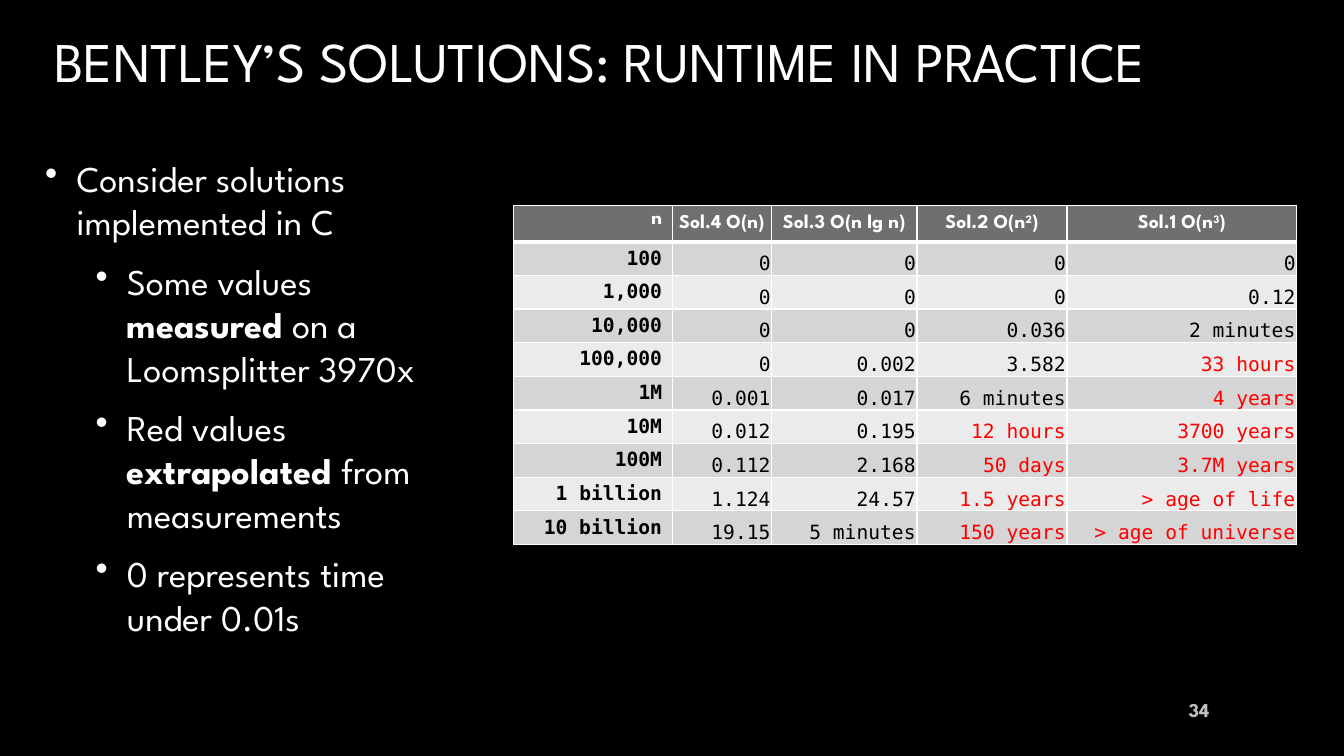
import lxml.etree
import pptx
import pptx.dml.color
import pptx.enum.text
import pptx.oxml.ns
import pptx.util

Cm = pptx.util.Cm
Pt = pptx.util.Pt
ALIGN = pptx.enum.text.PP_ALIGN
ANCHOR = pptx.enum.text.MSO_ANCHOR
SANS = "League Spartan"
MONO = "DejaVu Sans Mono"
WHITE, BLACK, RED, GREY = "FFFFFF", "000000", "FF0000", "BFBFBF"
HEADER_FILL, BAND_FILLS = "6F6F6F", ("D5D5D5", "EBEBEB")

TITLE = "BENTLEY’S SOLUTIONS: RUNTIME IN PRACTICE"
POINTS = [
    (0, "Consider solutions implemented in C"),
    (1, "Some values |measured |on a Loomsplitter 3970x"),
    (1, "Red values |extrapolated |from measurements"),
    (1, "0 represents time under 0.01s"),
]
COLUMN_WIDTHS = [3.99, 2.51, 3.66, 3.78, 5.79]
HEADINGS = ["n", "Sol.4 O(n)", "Sol.3 O(n lg n)", "Sol.2 O(n|2|)", "Sol.1 O(n|3|)"]
RUNTIMES = [
    ("100", "0", "0", "0", "0"),
    ("1,000", "0", "0", "0", "0.12"),
    ("10,000", "0", "0", "0.036", "2 minutes"),
    ("100,000", "0", "0.002", "3.582", "33 hours"),
    ("1M", "0.001", "0.017", "6 minutes", "4 years"),
    ("10M", "0.012", "0.195", "12 hours", "3700 years"),
    ("100M", "0.112", "2.168", "50 days", "3.7M years"),
    ("1 billion", "1.124", "24.57", "1.5 years", "> age of life"),
    ("10 billion", "19.15", "5 minutes", "150 years", "> age of universe"),
]
EXTRAPOLATED_UNITS = ("hours", "days", "years", "age")


def rgb(value):
    """Turn a hex string into a colour."""
    return pptx.dml.color.RGBColor.from_string(value)


def style(para, size, color, name=SANS, bold=False, align=ALIGN.LEFT):
    """Set the font and alignment of a paragraph."""
    para.alignment = align
    para.font.size = Pt(size)
    para.font.name = name
    para.font.bold = bold
    para.font.color.rgb = rgb(color)


def write(para, text, accent=None):
    """Add runs split at bars, giving every second one the accent."""
    for index, part in enumerate(text.split("|")):
        span = para.add_run()
        span.text = part
        if index % 2:
            accent(span)


def embolden(span):
    """Make a run bold."""
    span.font.bold = True


def raise_up(span):
    """Make a run superscript."""
    span._r.get_or_add_rPr().set("baseline", "30000")


def add_bullet(para, level):
    """Give a paragraph a white bullet with a hanging indent."""
    properties = para._p.get_or_add_pPr()
    properties.set("marL", str(Cm(0.79 + 1.27 * level)))
    properties.set("indent", str(Cm(-0.79)))
    color = lxml.etree.SubElement(properties, pptx.oxml.ns.qn("a:buClr"))
    lxml.etree.SubElement(color, pptx.oxml.ns.qn("a:srgbClr"), val=WHITE)
    lxml.etree.SubElement(properties, pptx.oxml.ns.qn("a:buChar"), char="•")


def add_borders(cell, top, bottom):
    """Draw white cell borders, with top and bottom widths in points."""
    properties = cell._tc.get_or_add_tcPr()
    for tag, width in (("lnL", 1), ("lnR", 1), ("lnT", top), ("lnB", bottom)):
        line = lxml.etree.SubElement(properties, pptx.oxml.ns.qn("a:" + tag), w=str(Pt(width)))
        fill = lxml.etree.SubElement(line, pptx.oxml.ns.qn("a:solidFill"))
        lxml.etree.SubElement(fill, pptx.oxml.ns.qn("a:srgbClr"), val=WHITE)


def add_frame(page, box, anchor):
    """Add a wrapping text box and return its text frame."""
    frame = page.shapes.add_textbox(*map(Cm, box)).text_frame
    frame.word_wrap = True
    frame.vertical_anchor = anchor
    return frame


def add_label(page, box, text, **font):
    """Add a single line of text centred vertically in the box."""
    para = add_frame(page, box, ANCHOR.MIDDLE).paragraphs[0]
    style(para, **font)
    write(para, text)


def add_points(page, box):
    """Add the bulleted notes."""
    frame = add_frame(page, box, ANCHOR.TOP)
    for index, (level, text) in enumerate(POINTS):
        para = frame.add_paragraph() if index else frame.paragraphs[0]
        para.level = level
        add_bullet(para, level)
        if index:
            para.space_before = Pt(5.2)
        para.space_after = Pt(6)
        style(para, 25.9, WHITE)
        write(para, text, embolden)


def fill_cell(cell, row, column, text):
    """Style one table cell by its row and column."""
    header = row == 0
    add_borders(cell, top=3 if row == 1 else 1, bottom=3 if header else 1)
    cell.fill.solid()
    cell.fill.fore_color.rgb = rgb(HEADER_FILL if header else BAND_FILLS[(row - 1) % 2])
    if column:
        cell.vertical_anchor = ANCHOR.MIDDLE if header else ANCHOR.BOTTOM
        cell.margin_left = cell.margin_right = cell.margin_top = Cm(0.03)
        cell.margin_bottom = 0
    extrapolated = any(unit in text for unit in EXTRAPOLATED_UNITS)
    para = cell.text_frame.paragraphs[0]
    style(
        para,
        14,
        WHITE if header else RED if extrapolated else BLACK,
        name=SANS if header else MONO,
        bold=header or column == 0,
        align=ALIGN.CENTER if header and column else ALIGN.RIGHT,
    )
    write(para, text, raise_up)


def add_runtimes(page, left, top, header_height=0.91, row_height=0.83):
    """Add the table of runtimes."""
    rows = [HEADINGS, *RUNTIMES]
    height = header_height + row_height * len(RUNTIMES)
    box = (left, top, sum(COLUMN_WIDTHS), height)
    table = page.shapes.add_table(len(rows), len(HEADINGS), *map(Cm, box)).table
    table.horz_banding = False
    for column, width in zip(table.columns, COLUMN_WIDTHS):
        column.width = Cm(width)
    for row, texts in enumerate(rows):
        table.rows[row].height = Cm(row_height if row else header_height)
        for column, text in enumerate(texts):
            fill_cell(table.cell(row, column), row, column, text)


def main():
    """Build the slide and save the deck."""
    deck = pptx.Presentation()
    deck.slide_width, deck.slide_height = Cm(33.87), Cm(19.05)
    page = deck.slides.add_slide(deck.slide_layouts[6])
    page.background.fill.solid()
    page.background.fill.fore_color.rgb = rgb(BLACK)
    add_label(page, (1.12, 0.1, 30.91, 2.84), TITLE, size=40, color=WHITE)
    add_points(page, (0.89, 3.81, 11.33, 12.98))
    add_label(page, (29.21, 17.37, 1.52, 1.02), "34", size=14, color=GREY, bold=True, align=ALIGN.RIGHT)
    add_runtimes(page, 12.95, 5.18)
    deck.save("out.pptx")


if __name__ == "__main__":
    main()
